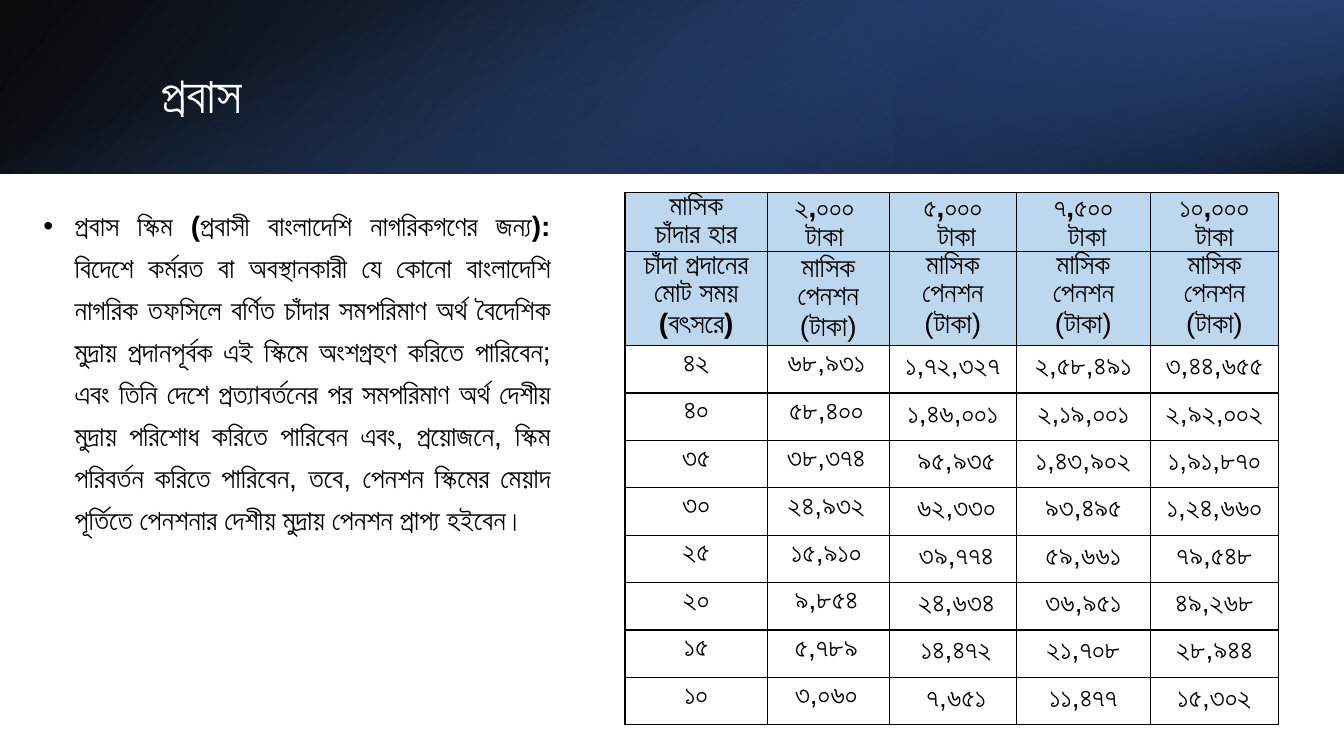
from lxml.etree import SubElement
from pptx import Presentation
from pptx.dml.color import RGBColor
from pptx.enum.shapes import MSO_SHAPE
from pptx.enum.text import MSO_ANCHOR, MSO_AUTO_SIZE, PP_ALIGN
from pptx.oxml.ns import qn
from pptx.util import Inches, Pt

SLIDE_W, SLIDE_H = Inches(13.33), Inches(7.5)
FONT = "Arial"
BLACK = RGBColor(0x00, 0x00, 0x00)
WHITE = RGBColor(0xFF, 0xFF, 0xFF)
DEEP_BLUE = RGBColor(0x2F, 0x55, 0x97)
NAVY = RGBColor(0x20, 0x38, 0x64)
BLUE = RGBColor(0x44, 0x72, 0xC4)
PALE_BLUE = RGBColor(0xBD, 0xD7, 0xEE)

SCHEME_LEAD = "প্রবাস স্কিম (প্রবাসী বাংলাদেশি নাগরিকগণের জন্য): "
SCHEME_TEXT = (
    "বিদেশে কর্মরত বা অবস্থানকারী যে কোনো বাংলাদেশি নাগরিক তফসিলে বর্ণিত চাঁদার "
    "সমপরিমাণ অর্থ বৈদেশিক মুদ্রায় প্রদানপূর্বক এই স্কিমে অংশগ্রহণ করিতে পারিবেন; "
    "এবং তিনি দেশে প্রত্যাবর্তনের পর সমপরিমাণ অর্থ দেশীয় মুদ্রায় পরিশোধ করিতে "
    "পারিবেন এবং, প্রয়োজনে, স্কিম পরিবর্তন করিতে পারিবেন, তবে, পেনশন স্কিমের মেয়াদ "
    "পূর্তিতে পেনশনার দেশীয় মুদ্রায় পেনশন প্রাপ্য হইবেন।"
)
PENSION = "মাসিক পেনশন\n(টাকা)"
HEADINGS = [
    ["মাসিক\nচাঁদার হার", "২,০০০ \nটাকা ", "৫,০০০\n টাকা", "৭,৫০০\n টাকা", "১০,০০০ টাকা"],
    ["চাঁদা প্রদানের মোট সময় (বৎসরে)", PENSION, PENSION, "মাসিক\nপেনশন\n(টাকা)", PENSION],
]
PENSIONS = [
    ["৪২", "৬৮,৯৩১", "১,৭২,৩২৭", "২,৫৮,৪৯১", "৩,৪৪,৬৫৫"],
    ["৪০", "৫৮,৪০০", "১,৪৬,০০১", "২,১৯,০০১", "২,৯২,০০২"],
    ["৩৫", "৩৮,৩৭৪", " ৯৫,৯৩৫", "১,৪৩,৯০২", "১,৯১,৮৭০"],
    ["৩০", "২৪,৯৩২", " ৬২,৩৩০", "৯৩,৪৯৫", "১,২৪,৬৬০"],
    ["২৫", "১৫,৯১০", " ৩৯,৭৭৪", "৫৯,৬৬১", "৭৯,৫৪৮"],
    ["২০", "৯,৮৫৪", " ২৪,৬৩৪", "৩৬,৯৫১", "৪৯,২৬৮"],
    ["১৫", "৫,৭৮৯", " ১৪,৪৭২", "২১,৭০৮", "২৮,৯৪৪"],
    ["১০", "৩,০৬০", " ৭,৬৫১", "১১,৪৭৭", "১৫,৩০২"],
]
COLUMN_SHARES = [10.58, 9.08, 9.45, 9.98, 9.53]
ROW_SHARES = [6.4, 12.4] + [6.27] * len(PENSIONS)


def across(percent):
    return round(SLIDE_W * percent / 100)


def down(percent):
    return round(SLIDE_H * percent / 100)


def area(left, top, width, height):
    return across(left), down(top), across(width), down(height)


def place(holder, box):
    holder.left, holder.top, holder.width, holder.height = box
    holder.text_frame.auto_size = MSO_AUTO_SIZE.NONE
    holder.text_frame.word_wrap = True


def write(paragraph, text, size=20, color=BLACK, bold=False, align=None, spacing=None):
    run = paragraph.add_run()
    run.text = text
    run.font.name, run.font.size, run.font.bold = FONT, Pt(size), bold
    run.font.color.rgb = color
    paragraph.alignment = align
    paragraph.line_spacing = spacing


def add_band(slide, box, stops, angle, rotation=0, flipped=False):
    band = slide.shapes.add_shape(MSO_SHAPE.RECTANGLE, *box)
    band.shadow.inherit = False
    band.line.fill.background()
    band.rotation = rotation
    if flipped:
        band.element.spPr.find(qn("a:xfrm")).set("flipH", "1")
    band.fill.gradient()
    band.fill.gradient_angle = 360 - angle
    for stop, (position, color, _) in zip(band.fill.gradient_stops, stops):
        stop.position = position / 100
        stop.color.rgb = color
    tints = band.element.spPr.iter(qn("a:srgbClr"))
    for tint, (_, _, opacity) in zip(list(tints), stops):
        SubElement(tint, qn("a:alpha")).set("val", str(opacity * 1000))


def add_bands(slide):
    depth = down(22.93)
    add_band(slide, (0, 0, SLIDE_W, depth),
             [(0, BLACK, 96), (100, DEEP_BLUE, 100)], 140, flipped=True)
    add_band(slide, (SLIDE_W * 2 // 3, 0, SLIDE_W // 3, depth),
             [(19, NAVY, 68), (100, BLUE, 79)], 320, rotation=180, flipped=True)
    offset = (SLIDE_W - depth) // 2
    add_band(slide, (offset, -offset, depth, SLIDE_W),
             [(23, BLUE, 0), (99, BLACK, 74)], 340, rotation=90)


def fill_title(heading):
    place(heading, area(11.25, 5.07, 82.37, 12.8))
    heading.text_frame.vertical_anchor = MSO_ANCHOR.MIDDLE
    heading.text_frame.margin_top = down(3.5)
    write(heading.text_frame.paragraphs[0], "প্রবাস", size=36, color=WHITE,
          align=PP_ALIGN.LEFT, spacing=0.9)


def fill_description(description):
    place(description, area(2.48, 25.87, 39.23, 55.6))
    description.text_frame.vertical_anchor = MSO_ANCHOR.TOP
    scheme = description.text_frame.paragraphs[0]
    for text, bold in ((SCHEME_LEAD, True), (SCHEME_TEXT, False)):
        write(scheme, text, bold=bold, align=PP_ALIGN.JUSTIFY, spacing=1.25)
    scheme.space_before = Pt(10)
    properties = scheme._p.get_or_add_pPr()
    properties.set("marL", str(Inches(0.31)))
    properties.set("indent", str(-Inches(0.31)))
    SubElement(properties, qn("a:buFont")).set("typeface", FONT)
    SubElement(properties, qn("a:buChar")).set("char", "•")


def outline(cell):
    properties = cell._tc.get_or_add_tcPr()
    for index, side in enumerate(("lnL", "lnR", "lnT", "lnB")):
        border = SubElement(properties, qn(f"a:{side}"), w=str(Pt(1)))
        ink = SubElement(SubElement(border, qn("a:solidFill")), qn("a:srgbClr"))
        ink.set("val", str(BLACK))
        properties.insert(index, border)


def fill_cell(cell, text, row, column):
    is_heading = row < len(HEADINGS)
    is_first_pension = column == 1 and not is_heading
    insets = (0, 0.02, 0.04, 0.12) if is_first_pension else (0.07, 0, 0.07, 0)
    cell.margin_left, cell.margin_top, cell.margin_right, cell.margin_bottom = map(Inches, insets)
    if is_heading and column == 1:
        cell.vertical_anchor = MSO_ANCHOR.MIDDLE
    cell.fill.solid()
    cell.fill.fore_color.rgb = PALE_BLUE if is_heading else WHITE
    outline(cell)
    for index, line in enumerate(text.split("\n")):
        frame = cell.text_frame
        paragraph = frame.add_paragraph() if index else frame.paragraphs[0]
        write(paragraph, line, bold=row == 0 or column == 0, align=PP_ALIGN.CENTER,
              spacing=None if is_heading or is_first_pension else 1.15)


def add_pension_table(slide):
    entries = HEADINGS + PENSIONS
    pensions = slide.shapes.add_table(
        len(entries), len(COLUMN_SHARES),
        *area(46.51, 25.47, sum(COLUMN_SHARES), sum(ROW_SHARES))).table
    for column, share in zip(pensions.columns, COLUMN_SHARES):
        column.width = across(share)
    for row, share in zip(pensions.rows, ROW_SHARES):
        row.height = down(share)
    for row, texts in enumerate(entries):
        for column, text in enumerate(texts):
            fill_cell(pensions.cell(row, column), text, row, column)


def main():
    deck = Presentation()
    deck.slide_width, deck.slide_height = SLIDE_W, SLIDE_H
    slide = deck.slides.add_slide(deck.slide_layouts[0])
    heading, description = slide.placeholders
    add_bands(slide)
    for holder in (heading, description):
        holder.element.getparent().append(holder.element)
    fill_title(heading)
    fill_description(description)
    add_pension_table(slide)
    deck.save("out.pptx")


if __name__ == "__main__":
    main()
